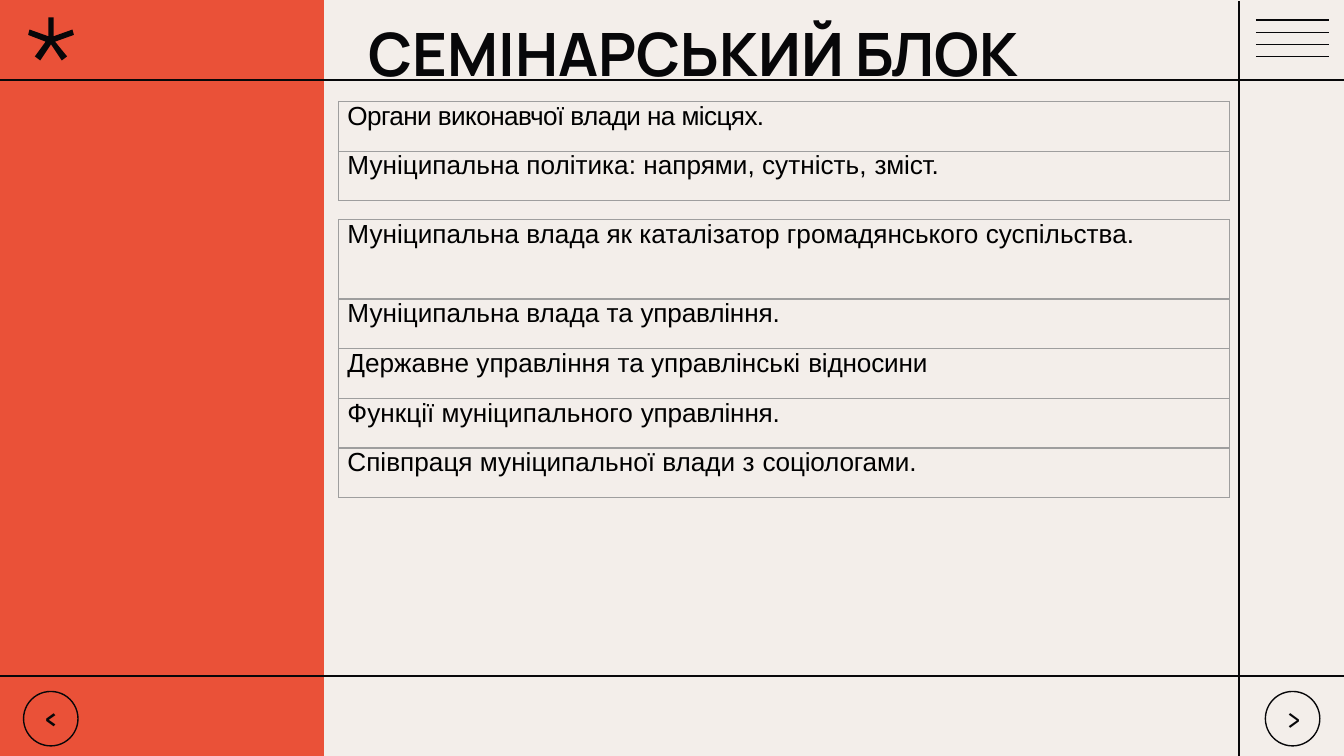
from dataclasses import dataclass

import pptx
import pptx.dml.color
import pptx.enum.shapes
import pptx.enum.text
import pptx.oxml
import pptx.oxml.ns
import pptx.util

PX = 4572  # EMU per px, 200 px to the inch
COLORS = {
    "paper": "F3EEEA",
    "accent": "EA5138",
    "ink": "070709",
    "text": "000000",
    "border": "9E9E9E",
}
LINE_WIDTH = pptx.util.Pt(0.75)
STAR = [
    (72, 26), (72, 54), (44, 44), (42, 52), (68, 62), (52, 84), (60, 90), (76, 66),
    (92, 90), (100, 84), (82, 62), (110, 52), (108, 44), (80, 54), (80, 26),
]


@dataclass
class Line:
    x1: int
    y1: int
    x2: int
    y2: int


@dataclass
class Button:
    left: int
    sign: str
    size: int
    bold: bool


@dataclass
class Topic:
    """A table row; its last words may have their own letter spacing."""
    start: str
    end: str = ""
    height: int = 74
    start_spacing: int = 0
    end_spacing: int = -10
    before: float = 5


@dataclass
class TopicTable:
    top: int
    topics: list[Topic]


FRAME_LINES = [Line(-2, 119, 2002, 119), Line(-2, 1006, 2002, 1006), Line(1844, 2, 1844, 1125)]
MENU_LINES = [Line(1869, y, 1978, y) for y in range(30, 85, 18)]
BUTTONS = [Button(35, "<", 12, True), Button(1883, ">", 15, False)]
TABLES = [
    TopicTable(151, [
        Topic("Органи виконавчої влади на місцях.", start_spacing=-35),
        Topic("Муніципальна політика: напрями, сутність, ", "зміст.", before=4.9),
    ]),
    TopicTable(327, [
        Topic("Муніципальна влада як каталізатор громадянського суспільства.",
              height=118, before=4.7),
        Topic("Муніципальна влада та ", "управління."),
        Topic("Державне управління та управлінські ", "відносини"),
        Topic("Функції муніципального ", "управління.", before=4.9),
        Topic("Співпраця муніципальної влади з ", "соціологами."),
    ]),
]


def px(*lengths: int) -> list[int]:
    return [pptx.util.Emu(length * PX) for length in lengths]


def rgb(name: str) -> pptx.dml.color.RGBColor:
    return pptx.dml.color.RGBColor.from_string(COLORS[name])


def style_span(span, font: str, size: int, color: str, bold: bool = False) -> None:
    span.font.name = font
    span.font.size = pptx.util.Pt(size)
    span.font.bold = bold
    span.font.color.rgb = rgb(color)


def fill_plain(shape, color: str) -> None:
    shape.shadow.inherit = False
    shape.fill.solid()
    shape.fill.fore_color.rgb = rgb(color)
    shape.line.fill.background()


def draw_line(shapes, line: Line) -> None:
    connector = shapes.add_connector(
        pptx.enum.shapes.MSO_CONNECTOR.STRAIGHT, *px(line.x1, line.y1, line.x2, line.y2))
    connector.line.color.rgb = rgb("ink")
    connector.line.width = LINE_WIDTH
    properties = connector._element.spPr
    properties.append(pptx.oxml.parse_xml(
        f'<a:effectLst {pptx.oxml.ns.nsdecls("a")}/>'))


def write_centred(shape, text: str, anchor, size: int, font: str, bold: bool) -> None:
    frame = shape.text_frame
    frame.word_wrap = True
    frame.vertical_anchor = anchor
    frame.margin_left, frame.margin_top, frame.margin_right, frame.margin_bottom = px(20, 20, 20, 20)
    frame.text = text
    para = frame.paragraphs[0]
    para.alignment = pptx.enum.text.PP_ALIGN.CENTER
    style_span(para.runs[0], font, size, "ink", bold)


def draw_button(page, button: Button) -> None:
    circle = page.shapes.add_shape(
        pptx.enum.shapes.MSO_SHAPE.OVAL, *px(button.left, 1029, 81, 81))
    circle.shadow.inherit = False
    circle.fill.background()
    circle.line.color.rgb = rgb("ink")
    circle.line.width = LINE_WIDTH
    write_centred(circle, button.sign, pptx.enum.text.MSO_ANCHOR.MIDDLE,
                  button.size, "Karla", button.bold)


def outline_cell(cell) -> None:
    properties = cell._tc.get_or_add_tcPr()
    for side in ("lnL", "lnR", "lnT", "lnB"):
        properties.append(pptx.oxml.parse_xml(
            f'<a:{side} {pptx.oxml.ns.nsdecls("a")} w="{LINE_WIDTH}"><a:solidFill>'
            f'<a:srgbClr val="{COLORS["border"]}"/></a:solidFill></a:{side}>'))
    cell.fill.background()


def write_topic(cell, topic: Topic) -> None:
    cell.margin_left = cell.margin_top = cell.margin_right = cell.margin_bottom = 0
    para = cell.text_frame.paragraphs[0]
    para.space_before = pptx.util.Pt(topic.before)
    indent = para._p.get_or_add_pPr()
    indent.set("marL", str(13 * PX))
    indent.set("indent", "0")
    for text, spacing in ((topic.start, topic.start_spacing), (topic.end, topic.end_spacing)):
        if text:
            span = para.add_run()
            span.text = text
            style_span(span, "Arial", 14, "text")
            span._r.get_or_add_rPr().set("spc", str(spacing))


def draw_table(page, block: TopicTable) -> None:
    height = sum(topic.height for topic in block.topics)
    table = page.shapes.add_table(
        len(block.topics), 1, *px(504, block.top, 1326, height)).table
    table.first_row = table.horz_banding = False
    for index, topic in enumerate(block.topics):
        table.rows[index].height = px(topic.height)[0]
        cell = table.cell(index, 0)
        write_topic(cell, topic)
        outline_cell(cell)


def main() -> None:
    deck = pptx.Presentation()
    deck.slide_width, deck.slide_height = px(2000, 1125)
    page = deck.slides.add_slide(deck.slide_layouts[6])
    page.background.fill.solid()
    page.background.fill.fore_color.rgb = rgb("paper")

    panel = page.shapes.add_shape(
        pptx.enum.shapes.MSO_SHAPE.RECTANGLE, *px(0, -1, 482, 1126))
    fill_plain(panel, "accent")
    for line in FRAME_LINES:
        draw_line(page.shapes, line)
    menu = page.shapes.add_group_shape()
    for line in MENU_LINES:
        draw_line(menu.shapes, line)

    builder = page.shapes.build_freeform(*STAR[0], scale=PX)
    builder.add_line_segments(STAR[1:], close=True)
    fill_plain(builder.convert_to_shape(), "ink")

    title = page.shapes.add_textbox(*px(504, 10, 1056, 142))
    write_centred(title, "СЕМІНАРСЬКИЙ БЛОК", pptx.enum.text.MSO_ANCHOR.BOTTOM,
                  32, "Manrope", True)
    for button in BUTTONS:
        draw_button(page, button)
    for block in TABLES:
        draw_table(page, block)
    deck.save("out.pptx")


if __name__ == "__main__":
    main()
